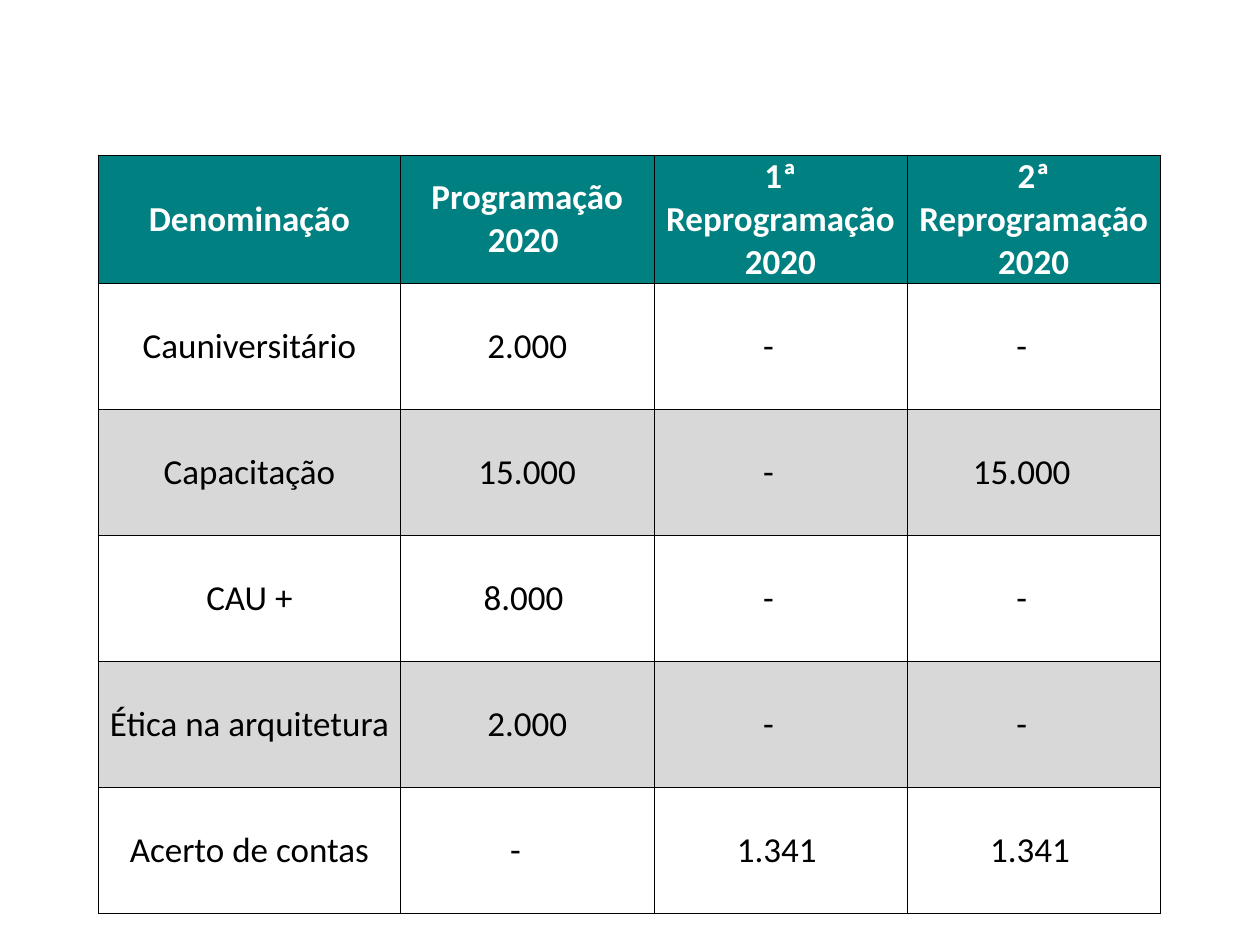
from dataclasses import dataclass

from lxml import etree
from pptx import Presentation
from pptx.dml.color import RGBColor
from pptx.enum import text
from pptx.oxml.ns import qn
from pptx.util import Inches, Pt


@dataclass(frozen=True)
class Theme:
    font: str = "Calibri"
    size: int = 20
    header_fill: str = "008080"
    header_text: str = "FFFFFF"
    body_text: str = "000000"
    bands: tuple = ("D8D8D8", "FFFFFF")
    border: str = "000000"
    border_width: float = 0.5


theme = Theme()


def add_borders(cell):
    """Draw a thin solid line on all four sides; call before the fill is set."""
    properties = cell._tc.get_or_add_tcPr()
    for side in ("a:lnL", "a:lnR", "a:lnT", "a:lnB"):
        line = etree.SubElement(properties, qn(side), w=str(Pt(theme.border_width)))
        fill = etree.SubElement(line, qn("a:solidFill"))
        etree.SubElement(fill, qn("a:srgbClr"), val=theme.border)


# Values in a tuple carry a right inset that shifts them left of centre.
dash = ("-", 0.19)
rows = [
    ["Denominação", "Programação 2020 ", "1ª Reprogramação 2020", "2ª Reprogramação 2020"],
    ["Cauniversitário", "2.000", dash, dash],
    ["Capacitação", "15.000", dash, ("15.000", 0.19)],
    ["CAU +", ("8.000", 0.06), dash, dash],
    ["Ética na arquitetura", "2.000", dash, dash],
    ["Acerto de contas", dash, ("1.341", 0.06), ("1.341", 0.06)],
]
column_widths = [2.4, 2.01, 2.01, 2.01]

deck = Presentation()
deck.slide_width, deck.slide_height = Inches(10), Inches(7.5)
page = deck.slides.add_slide(deck.slide_layouts[6])

table = page.shapes.add_table(
    len(rows), len(column_widths),
    Inches(0.78), Inches(1.23), Inches(sum(column_widths)), Inches(len(rows)),
).table
for column, width in zip(table.columns, column_widths):
    column.width = Inches(width)

for row_index, values in enumerate(rows):
    is_header = row_index == 0
    table.rows[row_index].height = Inches(1)
    for column_index, value in enumerate(values):
        words, inset = value if isinstance(value, tuple) else (value, 0)
        cell = table.cell(row_index, column_index)
        cell.margin_left = cell.margin_top = cell.margin_bottom = 0
        cell.margin_right = Inches(inset)
        cell.vertical_anchor = text.MSO_ANCHOR.MIDDLE
        add_borders(cell)
        cell.fill.solid()
        cell.fill.fore_color.rgb = RGBColor.from_string(
            theme.header_fill if is_header else theme.bands[row_index % 2])

        para = cell.text_frame.paragraphs[0]
        para.alignment = text.PP_ALIGN.CENTER
        span = para.add_run()
        span.text = words
        span.font.name = theme.font
        span.font.size = Pt(theme.size)
        span.font.bold = is_header
        span.font.color.rgb = RGBColor.from_string(
            theme.header_text if is_header else theme.body_text)

deck.save("out.pptx")
